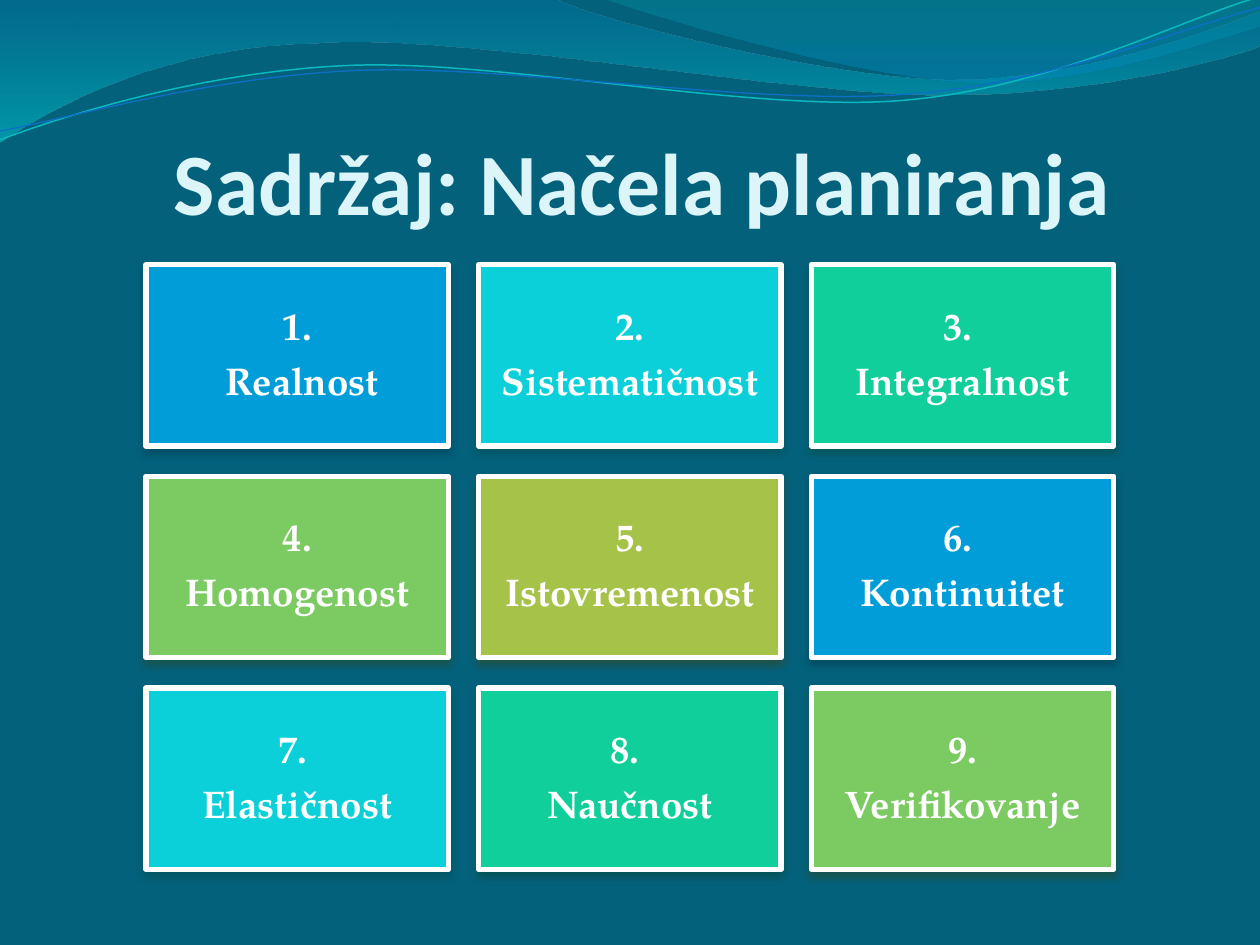
from dataclasses import dataclass
from itertools import cycle

from lxml import etree
from pptx import Presentation
from pptx.dml.color import RGBColor
from pptx.enum.shapes import MSO_SHAPE
from pptx.enum.text import MSO_ANCHOR, PP_ALIGN
from pptx.oxml.ns import qn
from pptx.shapes.autoshape import Shape
from pptx.slide import Slide
from pptx.util import Emu, Pt

CENTER = PP_ALIGN.CENTER
MIDDLE = MSO_ANCHOR.MIDDLE
BOTTOM = MSO_ANCHOR.BOTTOM
RECTANGLE = MSO_SHAPE.RECTANGLE

PX = 9144  # EMU per px, 100 px to the inch

BACKGROUND = RGBColor(0x04, 0x61, 0x7B)
TITLE_COLOR = RGBColor(0xDB, 0xF5, 0xF9)
WHITE = RGBColor(0xFF, 0xFF, 0xFF)

Point = tuple[int, int]


@dataclass
class GradientStop:
    position: float
    color: RGBColor
    opacity: int


@dataclass
class Wave:
    """Outline in px: a step of one point is a line, of three points a curve."""
    start: Point
    steps: list[list[Point]]
    stops: tuple[GradientStop, ...] = ()
    line_color: RGBColor | None = None
    line_width: float = 0


@dataclass
class TileStyle:
    fill: RGBColor
    shadow: RGBColor


WAVES = [
    Wave((0, 0),
         [[(440, -1)], [(476, 17), (664, 63), (758, 63)],
          [(853, 63), (958, 26), (1000, 9)], [(1001, 36)],
          [(983, 44), (870, 76), (746, 75)], [(622, 75), (382, 28), (257, 34)],
          [(129, 36), (46, 83), (-1, 113)]],
         stops=(GradientStop(0, RGBColor(0x00, 0x74, 0xA1), 45),
                GradientStop(1, RGBColor(0x00, 0xC6, 0xCF), 55))),
    Wave((479, -1),
         [[(509, 11), (682, 62), (769, 65)], [(856, 69), (961, 32), (1000, 21)],
          [(1000, 0)]],
         stops=(GradientStop(0, RGBColor(0x00, 0xA1, 0xA9), 30),
                GradientStop(0.8, RGBColor(0x00, 0x8B, 0xBF), 45))),
    Wave((0, 111),
         [[(48, 93), (158, 57), (277, 52)], [(395, 47), (593, 89), (713, 80)],
          [(833, 71), (938, 15), (998, -2)]],
         line_color=RGBColor(0x0A, 0xB8, 0xBF), line_width=0.85),
    Wave((0, 104),
         [[(47, 96), (164, 61), (283, 56)], [(403, 51), (597, 84), (717, 75)],
          [(836, 67), (941, 21), (1000, 6)]],
         line_color=RGBColor(0x0F, 0x6F, 0xC6), line_width=0.75),
]

TILE_STYLES = [
    TileStyle(RGBColor(0x00, 0x9D, 0xD9), RGBColor(0x00, 0x37, 0x4C)),
    TileStyle(RGBColor(0x0B, 0xD0, 0xD9), RGBColor(0x02, 0x4B, 0x4E)),
    TileStyle(RGBColor(0x10, 0xCF, 0x9B), RGBColor(0x04, 0x4A, 0x37)),
    TileStyle(RGBColor(0x7C, 0xCA, 0x62), RGBColor(0x2B, 0x48, 0x21)),
    TileStyle(RGBColor(0xA5, 0xC2, 0x49), RGBColor(0x3A, 0x45, 0x19)),
]
PRINCIPLES = ["1.\n Realnost", "2.\nSistematičnost", "3. \nIntegralnost",
              "4.\nHomogenost", "5.\nIstovremenost", "6. \nKontinuitet",
              "7. \nElastičnost", "8. \nNaučnost", "9.\nVerifikovanje"]
COLUMNS = 3
GRID_LEFT, GRID_TOP = 116, 210
TILE_WIDTH, TILE_HEIGHT, TILE_GAP = 240, 144, 24
TILE_MARGIN = 9


def px(length: int) -> Emu:
    return Emu(length * PX)


def set_opacity(color_element: etree._Element, percent: int) -> None:
    etree.SubElement(color_element, qn("a:alpha"), val=str(percent * 1000))


def fill_gradient(shape: Shape, stops: tuple[GradientStop, ...]) -> None:
    shape.fill.gradient()
    shape.fill.gradient_angle = 270
    for target, stop in zip(shape.fill.gradient_stops, stops):
        target.position = stop.position
        target.color.rgb = stop.color
    for color_element, stop in zip(shape.element.iter(qn("a:srgbClr")), stops):
        set_opacity(color_element, stop.opacity)


def bend_curves(shape: Shape, steps: list[list[Point]]) -> None:
    """Merge the three line segments of each curve step into one cubic curve."""
    segments = iter(list(shape.element.iter(qn("a:lnTo"))))
    for step in steps:
        first, *others = [next(segments) for _ in step]
        if not others:
            continue
        curve = etree.Element(qn("a:cubicBezTo"))
        first.addprevious(curve)
        for segment in (first, *others):
            curve.append(segment[0])
            segment.getparent().remove(segment)


def draw_wave(slide: Slide, wave: Wave) -> None:
    builder = slide.shapes.build_freeform(*wave.start, scale=PX)
    builder.add_line_segments([point for step in wave.steps for point in step],
                              close=bool(wave.stops))
    shape = builder.convert_to_shape()
    bend_curves(shape, wave.steps)
    shape.shadow.inherit = False
    if wave.stops:
        fill_gradient(shape, wave.stops)
        shape.line.fill.background()
    else:
        shape.fill.background()
        shape.line.color.rgb = wave.line_color
        shape.line.width = Pt(wave.line_width)


def add_shadow(shape: Shape, color: RGBColor) -> None:
    shape.shadow.inherit = False
    effects = shape.element.spPr.find(qn("a:effectLst"))
    shadow = etree.SubElement(effects, qn("a:outerShdw"), blurRad=str(Pt(4.5)),
                              dist=str(Pt(3)), dir="5400000", rotWithShape="0")
    set_opacity(etree.SubElement(shadow, qn("a:srgbClr"), val=str(color)), 48)


def draw_tile(slide: Slide, index: int, text: str, style: TileStyle) -> None:
    row, column = divmod(index, COLUMNS)
    tile = slide.shapes.add_shape(
        RECTANGLE,
        px(GRID_LEFT + column * (TILE_WIDTH + TILE_GAP)),
        px(GRID_TOP + row * (TILE_HEIGHT + TILE_GAP)),
        px(TILE_WIDTH), px(TILE_HEIGHT))
    tile.fill.solid()
    tile.fill.fore_color.rgb = style.fill
    tile.line.color.rgb = WHITE
    tile.line.width = Pt(3)
    add_shadow(tile, style.shadow)

    frame = tile.text_frame
    frame.word_wrap = True
    frame.vertical_anchor = MIDDLE
    frame.margin_left = frame.margin_right = px(TILE_MARGIN)
    frame.margin_top = frame.margin_bottom = px(TILE_MARGIN)
    frame.text = text
    for paragraph in frame.paragraphs:
        paragraph.alignment = CENTER
        paragraph.line_spacing = 0.9
        paragraph.space_after = Pt(7.7)
        paragraph.font.name = "TeX Gyre Pagella"
        paragraph.font.size = Pt(22)
        paragraph.font.bold = True
        paragraph.font.color.rgb = WHITE


def place_title(slide: Slide, text: str) -> None:
    title = slide.shapes.title
    title.element.getparent().append(title.element)  # in front of the waves
    title.left, title.top, title.width, title.height = px(20), px(60), px(980), px(125)
    frame = title.text_frame
    frame.text = text
    frame.word_wrap = True
    frame.vertical_anchor = BOTTOM
    frame.margin_left = frame.margin_right = frame.margin_bottom = 0
    frame.margin_top = px(5)
    paragraph = frame.paragraphs[0]
    paragraph.alignment = CENTER
    paragraph.font.name = "Calibri"
    paragraph.font.size = Pt(50)
    paragraph.font.bold = True
    paragraph.font.color.rgb = TITLE_COLOR


def main() -> None:
    presentation = Presentation()
    presentation.slide_width, presentation.slide_height = px(1000), px(750)
    slide = presentation.slides.add_slide(presentation.slide_layouts[5])
    slide.background.fill.solid()
    slide.background.fill.fore_color.rgb = BACKGROUND
    for wave in WAVES:
        draw_wave(slide, wave)
    place_title(slide, "Sadržaj: Načela planiranja")
    for index, (text, style) in enumerate(zip(PRINCIPLES, cycle(TILE_STYLES))):
        draw_tile(slide, index, text, style)
    presentation.save("out.pptx")


if __name__ == "__main__":
    main()
